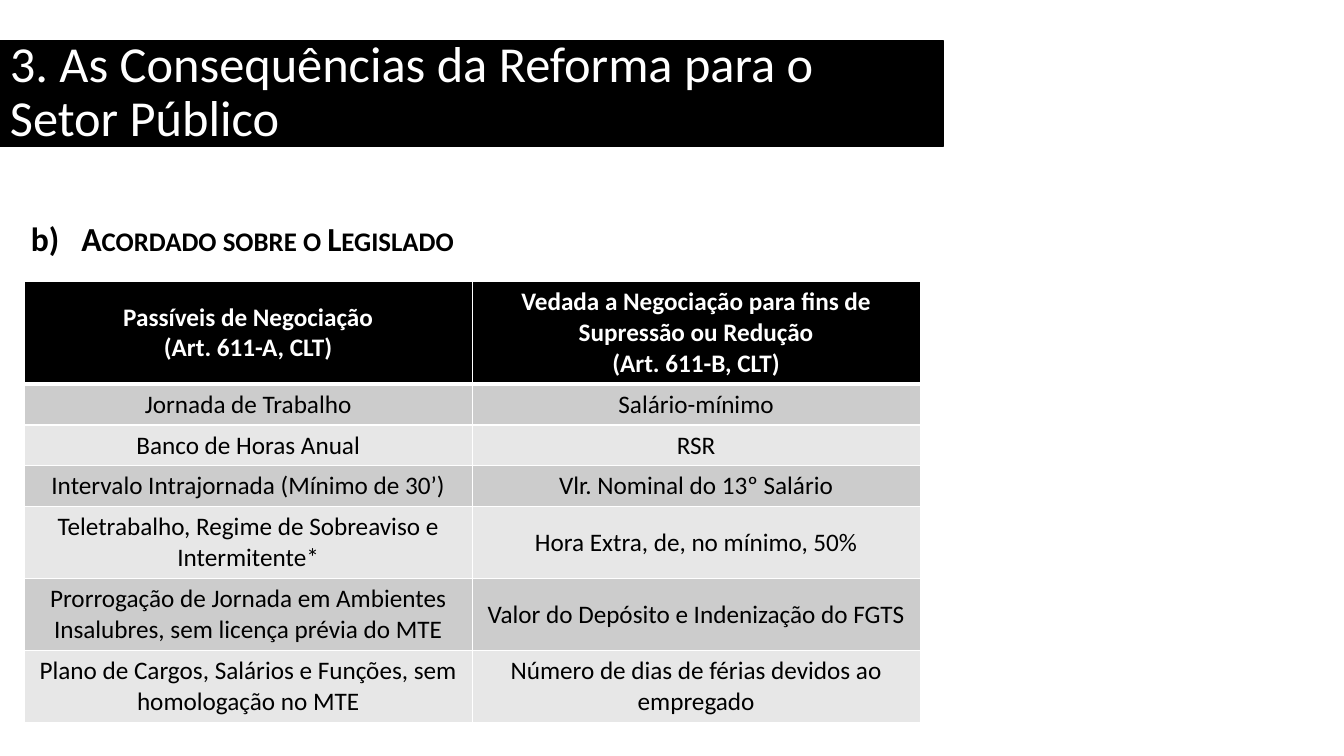
import pptx
import pptx.dml.color
import pptx.enum.shapes
import pptx.enum.text
import pptx.oxml
import pptx.oxml.ns
import pptx.util
from pptx.util import Cm

TITLE = "3. As Consequências da Reforma para o Setor Público"
SUBTITLE = "Acordado sobre o Legislado"
ROWS = [
    (3, "Passíveis de Negociação\n(Art. 611-A, CLT)",
     "Vedada a Negociação para fins de Supressão ou Redução\n(Art. 611-B, CLT)"),
    (1, "Jornada de Trabalho", "Salário-mínimo"),
    (1, "Banco de Horas Anual", "RSR"),
    (1, "Intervalo Intrajornada (Mínimo de 30’)", "Vlr. Nominal do 13º Salário"),
    (2, "Teletrabalho, Regime de Sobreaviso e Intermitente*", "Hora Extra, de, no mínimo, 50%"),
    (2, "Prorrogação de Jornada em Ambientes Insalubres, sem licença prévia do MTE",
     "Valor do Depósito e Indenização do FGTS"),
    (2, "Plano de Cargos, Salários e Funções, sem homologação no MTE",
     "Número de dias de férias devidos ao empregado"),
]
COLORS = {"black": "000000", "white": "FFFFFF", "odd": "CCCCCC", "even": "E7E7E7"}
FONT = "Calibri"
LINE_HEIGHT, CELL_PADDING, COLUMN_WIDTH = 0.78, 0.25, 11.29


def rgb(name):
    return pptx.dml.color.RGBColor.from_string(COLORS[name])


def add_run(paragraph, text, size, color, bold=False):
    run = paragraph.add_run()
    run.text = text
    run.font.name = FONT
    run.font.size = pptx.util.Pt(size)
    run.font.bold = bold
    run.font.color.rgb = rgb(color)
    return run


def add_title(slide):
    shape = slide.shapes.add_shape(
        pptx.enum.shapes.MSO_SHAPE.RECTANGLE, Cm(0), Cm(1.02), Cm(23.77), Cm(2.67))
    shape.shadow.inherit = False
    shape.fill.solid()
    shape.fill.fore_color.rgb = rgb("black")
    shape.line.color.rgb = rgb("black")
    shape.line.width = pptx.util.Pt(1)
    shape.text_frame.vertical_anchor = pptx.enum.text.MSO_ANCHOR.MIDDLE
    paragraph = shape.text_frame.paragraphs[0]
    paragraph.alignment = pptx.enum.text.PP_ALIGN.LEFT
    paragraph.line_spacing = 0.9
    add_run(paragraph, TITLE, 36, "white")


def add_subtitle(slide):
    box = slide.shapes.add_textbox(Cm(0.53), Cm(5.49), Cm(23.93), Cm(1.3))
    box.text_frame.word_wrap = True
    paragraph = box.text_frame.paragraphs[0]
    paragraph.line_spacing = 0.9
    properties = paragraph._p.get_or_add_pPr()
    properties.set("marL", str(Cm(1.27)))
    properties.set("indent", str(-Cm(1.27)))
    properties.append(pptx.oxml.parse_xml(
        f'<a:buAutoNum {pptx.oxml.ns.nsdecls("a")} type="alphaLcParenR" startAt="2"/>'))
    run = add_run(paragraph, SUBTITLE, 24, "black", True)
    run._r.get_or_add_rPr().set("cap", "small")


def set_borders(cell, bottom):
    properties = cell._tc.get_or_add_tcPr()
    for index, (side, points) in enumerate((("L", 1), ("R", 1), ("T", 1), ("B", bottom))):
        properties.insert(index, pptx.oxml.parse_xml(
            f'<a:ln{side} {pptx.oxml.ns.nsdecls("a")} w="{pptx.util.Pt(points)}"><a:solidFill>'
            f'<a:srgbClr val="{COLORS["white"]}"/></a:solidFill></a:ln{side}>'))


def fill_cell(cell, text, row_index):
    header = row_index == 0
    cell.fill.solid()
    cell.fill.fore_color.rgb = rgb("black" if header else "odd" if row_index % 2 else "even")
    cell.vertical_anchor = pptx.enum.text.MSO_ANCHOR.MIDDLE
    set_borders(cell, 3 if header else 1)
    for index, line in enumerate(text.split("\n")):
        frame = cell.text_frame
        paragraph = frame.add_paragraph() if index else frame.paragraphs[0]
        paragraph.alignment = pptx.enum.text.PP_ALIGN.CENTER
        add_run(paragraph, line, 18, "white" if header else "black", header)


def add_rules_table(slide):
    heights = [Cm(LINE_HEIGHT * lines + CELL_PADDING) for lines, *_ in ROWS]
    table = slide.shapes.add_table(
        len(ROWS), 2, Cm(0.61), Cm(7.09), Cm(2 * COLUMN_WIDTH), sum(heights)).table
    for column in table.columns:
        column.width = Cm(COLUMN_WIDTH)
    for row_index, (_, *texts) in enumerate(ROWS):
        table.rows[row_index].height = heights[row_index]
        for column_index, text in enumerate(texts):
            fill_cell(table.cell(row_index, column_index), text, row_index)


def main():
    """Build the slide on negotiated terms versus legislated terms."""
    presentation = pptx.Presentation()
    presentation.slide_width = Cm(33.87)
    presentation.slide_height = Cm(19.05)
    slide = presentation.slides.add_slide(presentation.slide_layouts[6])
    add_title(slide)
    add_subtitle(slide)
    add_rules_table(slide)
    presentation.save("out.pptx")


if __name__ == "__main__":
    main()
